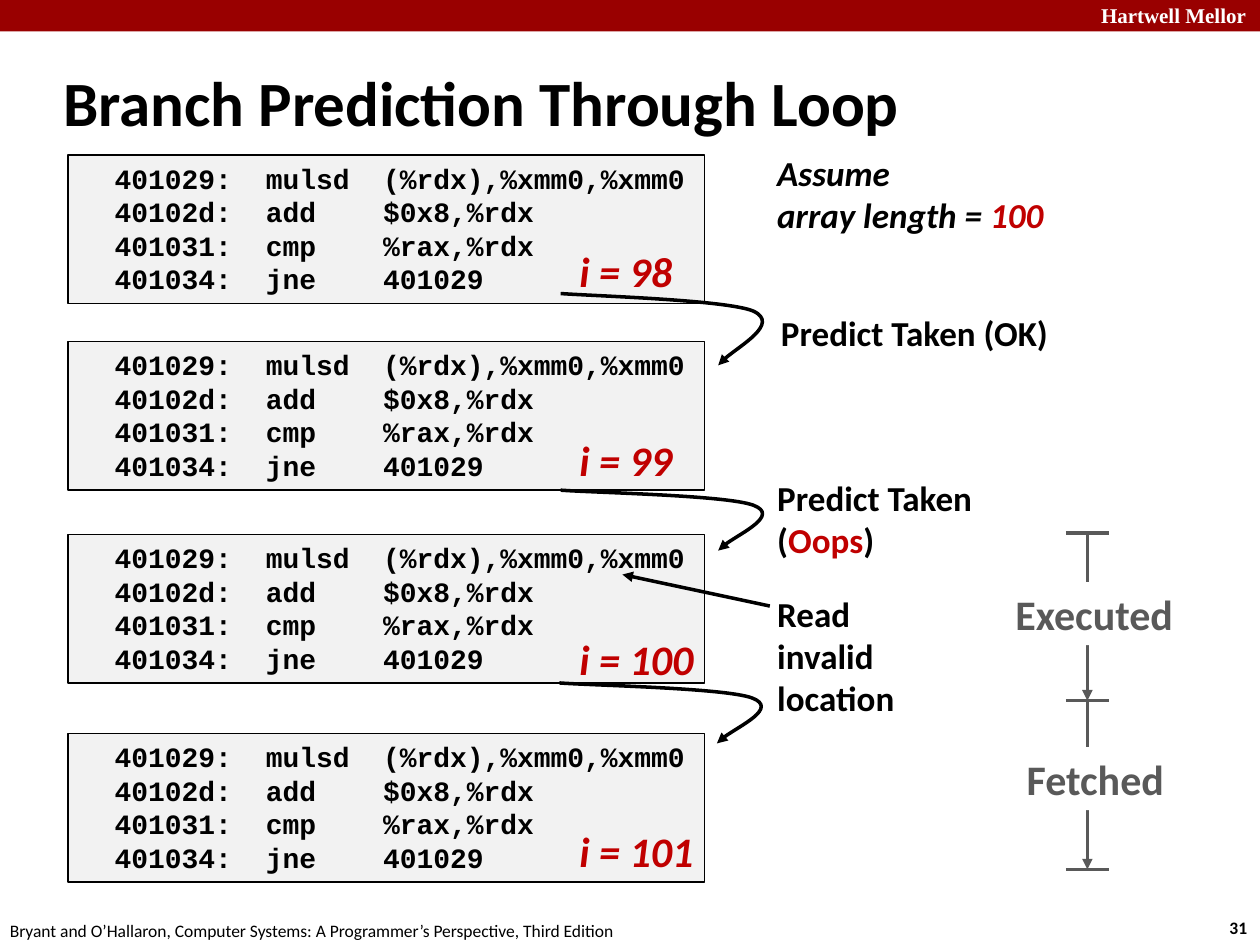
from dataclasses import dataclass

from lxml import etree
from pptx import Presentation
from pptx.dml.color import RGBColor
from pptx.enum.shapes import MSO_CONNECTOR, MSO_SHAPE
from pptx.enum.text import MSO_ANCHOR, PP_ALIGN
from pptx.oxml.ns import qn
from pptx.util import Emu, Pt

RECTANGLE = MSO_SHAPE.RECTANGLE
STRAIGHT = MSO_CONNECTOR.STRAIGHT
LEFT = PP_ALIGN.LEFT
TOP, MIDDLE = MSO_ANCHOR.TOP, MSO_ANCHOR.MIDDLE
PX = 9144
COLORS = {
    "black": "000000", "white": "FFFFFF", "banner": "990000",
    "code": "F2F2F2", "accent": "C00000", "stage": "595959",
}
INSTRUCTIONS = (
    "401029:\tmulsd\t(%rdx),%xmm0,%xmm0",
    "40102d:\tadd\t$0x8,%rdx",
    "401031:\tcmp\t%rax,%rdx",
    "401034:\tjne\t401029",
)
CODE_TABS = (120, 213)


@dataclass(frozen=True)
class Style:
    size: int
    color: str = "black"
    bold: bool = True
    italic: bool = False
    font: str = "Calibri"


@dataclass(frozen=True)
class Label:
    left: int
    top: int
    width: int
    height: int
    lines: tuple
    style: Style
    wrap: bool = False
    fill: str = ""


@dataclass(frozen=True)
class Iteration:
    top: int
    index: int
    index_top: int
    index_width: int


@dataclass(frozen=True)
class Jump:
    left: int
    top: int
    height: int


@dataclass(frozen=True)
class Segment:
    start: tuple
    end: tuple
    color: str = "stage"
    arrow: bool = False


CODE = Style(16, font="Courier New")
INDEX = Style(24, "accent", italic=True)
NOTE = Style(20)
ASSUMPTION = Style(20, italic=True)
STAGE = Style(24, "stage")
SMALL = Style(10, bold=False)

ITERATIONS = (
    Iteration(123, 98, 190, 94),
    Iteration(271, 99, 340, 94),
    Iteration(424, 100, 498, 111),
    Iteration(582, 101, 650, 111),
)
JUMPS = (Jump(445, 233, 57), Jump(445, 389, 48), Jump(444, 542, 48))
JUMP_X = (0, 26, 132, 153, 174, 131, 125)
JUMP_Y = (0, 2, 4, 12, 20, 40, 48)

FRAME_LABELS = (
    Label(864, -3, 143, 30, ((("Hartwell Mellor", "white"),),),
          Style(12, font="Times New Roman"), True),
    Label(966, 723, 37, 27, ((("31", "black"),),), Style(10)),
    Label(-2, 725, 508, 27,
          ((("Bryant and O’Hallaron, Computer Systems: "
             "A Programmer’s Perspective, Third Edition", "black"),),), SMALL),
)
NOTES = (
    Label(607, 115, 232, 77,
          ((("Assume", "black"),),
           (("array length = ", "black"), ("100", "accent"))), ASSUMPTION),
    Label(610, 242, 234, 44, ((("Predict Taken (OK)", "black"),),), NOTE),
    Label(607, 373, 176, 77,
          ((("Predict Taken", "black"),),
           (("(", "black"), ("Oops", "accent"), (")", "black"))), NOTE),
    Label(607, 465, 142, 111, ((("Read invalid location", "black"),),), NOTE, True),
)
STAGES = (
    Label(796, 462, 147, 50, ((("Executed", "stage"),),), STAGE, fill="white"),
    Label(805, 593, 130, 50, ((("Fetched", "stage"),),), STAGE, fill="white"),
)
STAGE_X = 863
STAGE_LIMITS = (423, 556, 690)


def px(value: int) -> Emu:
    return Emu(value * PX)


def rgb(name: str) -> RGBColor:
    return RGBColor.from_string(COLORS[name])


def add_run(paragraph, text: str, style: Style, color: str) -> None:
    run = paragraph.add_run()
    run.text = text
    run.font.name = style.font
    run.font.size = Pt(style.size)
    run.font.bold = style.bold
    run.font.italic = style.italic
    run.font.color.rgb = rgb(color)


def write_lines(frame, lines: tuple, style: Style) -> None:
    for number, line in enumerate(lines):
        paragraph = frame.add_paragraph() if number else frame.paragraphs[0]
        paragraph.alignment = LEFT
        for text, color in line:
            add_run(paragraph, text, style, color)


def add_label(slide, label: Label) -> None:
    box = slide.shapes.add_textbox(
        px(label.left), px(label.top), px(label.width), px(label.height))
    box.text_frame.word_wrap = label.wrap
    if label.fill:
        box.fill.solid()
        box.fill.fore_color.rgb = rgb(label.fill)
    write_lines(box.text_frame, label.lines, label.style)


def add_panel(slide, left: int, top: int, width: int, height: int, fill: str):
    panel = slide.shapes.add_shape(
        RECTANGLE, px(left), px(top), px(width), px(height))
    panel.shadow.inherit = False
    panel.fill.solid()
    panel.fill.fore_color.rgb = rgb(fill)
    panel.line.fill.background()
    return panel


def add_code(slide, iteration: Iteration) -> None:
    listing = add_panel(slide, 54, iteration.top, 505, 118, "code")
    listing.line.color.rgb = rgb("black")
    listing.line.width = Pt(0.75)
    frame = listing.text_frame
    frame.word_wrap = True
    frame.vertical_anchor = TOP
    frame.margin_left, frame.margin_right = px(37), 0
    write_lines(frame, tuple(((text, "black"),) for text in INSTRUCTIONS), CODE)
    for paragraph in frame.paragraphs:
        stops = etree.SubElement(paragraph._p.get_or_add_pPr(), qn("a:tabLst"))
        for position in CODE_TABS:
            etree.SubElement(stops, qn("a:tab"), pos=str(px(position)), algn="l")


def style_line(shape, color: str, arrow: bool) -> None:
    shape.line.color.rgb = rgb(color)
    shape.line.width = Pt(2)
    if arrow:
        etree.SubElement(shape.line._get_or_add_ln(), qn("a:tailEnd"), type="triangle")


def add_jump(slide, jump: Jump) -> None:
    points = [(jump.left + x, jump.top + round(y * jump.height / JUMP_Y[-1]))
              for x, y in zip(JUMP_X, JUMP_Y)]
    builder = slide.shapes.build_freeform(*points[0], scale=PX)
    builder.add_line_segments(points[1:], close=False)
    curve = builder.convert_to_shape()
    curve.shadow.inherit = False
    curve.fill.background()
    style_line(curve, "black", True)
    outline = next(curve._element.iter(qn("a:path")))
    steps = outline.findall(qn("a:lnTo"))
    for first in range(0, len(steps), 3):
        bend = etree.SubElement(outline, qn("a:cubicBezTo"))
        for step in steps[first:first + 3]:
            bend.append(step[0])
            outline.remove(step)


def add_segment(slide, segment: Segment) -> None:
    connector = slide.shapes.add_connector(
        STRAIGHT, *map(px, segment.start + segment.end))
    style_line(connector, segment.color, segment.arrow)
    etree.SubElement(connector._element.spPr, qn("a:effectLst"))


def main() -> None:
    deck = Presentation()
    deck.slide_width, deck.slide_height = px(1000), px(750)
    slide = deck.slides.add_slide(deck.slide_layouts[5])
    title = slide.shapes.title
    title.left, title.top, title.width, title.height = map(px, (40, 49, 859, 63))
    title.text_frame.vertical_anchor = MIDDLE
    write_lines(title.text_frame,
                ((("Branch Prediction Through Loop", "black"),),), Style(36))
    add_panel(slide, 0, 0, 1000, 25, "banner")
    for label in FRAME_LABELS:
        add_label(slide, label)
    for iteration in ITERATIONS:
        add_code(slide, iteration)
        add_label(slide, Label(450, iteration.index_top, iteration.index_width, 50,
                               (((f"i = {iteration.index}", "accent"),),), INDEX))
    for jump in JUMPS:
        add_jump(slide, jump)
    for note in NOTES:
        add_label(slide, note)
    add_segment(slide, Segment((611, 481), (494, 456), "black", True))
    for top, bottom in zip(STAGE_LIMITS, STAGE_LIMITS[1:]):
        add_segment(slide, Segment((STAGE_X, top), (STAGE_X, bottom), arrow=True))
    for stage in STAGES:
        add_label(slide, stage)
    for limit in STAGE_LIMITS:
        add_segment(slide, Segment((STAGE_X - 17, limit), (STAGE_X + 17, limit)))
    deck.save("out.pptx")


if __name__ == "__main__":
    main()
